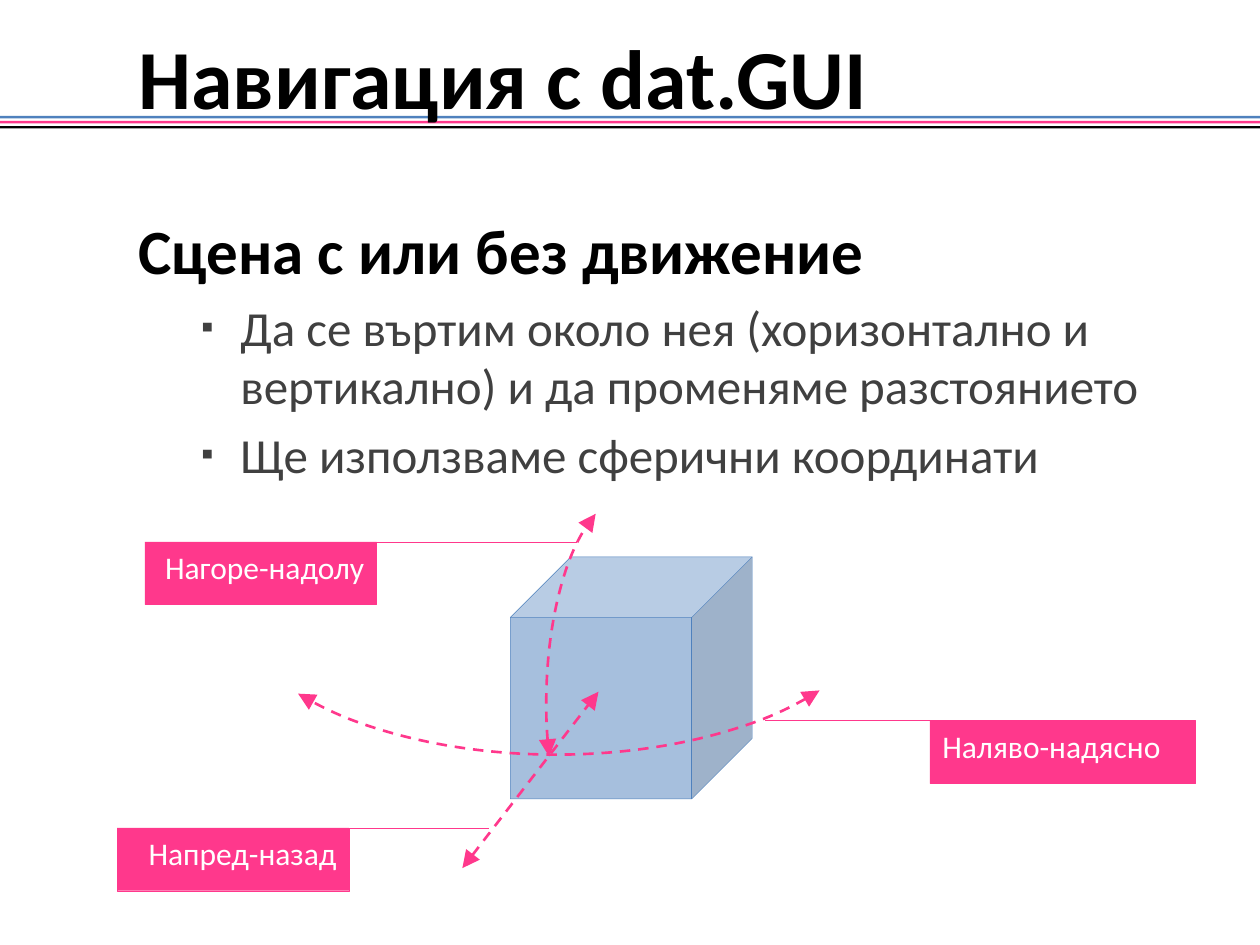
"""Build the slide on camera navigation around a scene with dat.GUI."""
import pptx
import pptx.dml.color
import pptx.enum.dml
import pptx.enum.shapes
import pptx.enum.text
import pptx.oxml.ns
import pptx.util

RGB = pptx.dml.color.RGBColor
BLUE = RGB(0x4F, 0x81, 0xBD)
PINK = RGB(0xFF, 0x38, 0x8C)
BLACK = RGB(0, 0, 0)
GREY = RGB(0x40, 0x40, 0x40)
WHITE = RGB(0xFF, 0xFF, 0xFF)
FORMS = pptx.enum.shapes.MSO_SHAPE
STRAIGHT = pptx.enum.shapes.MSO_CONNECTOR.STRAIGHT
ALIGN = pptx.enum.text.PP_ALIGN
ANCHOR = pptx.enum.text.MSO_ANCHOR
qn = pptx.oxml.ns.qn


def write(paragraph, text, size, color, bold=False, align=ALIGN.LEFT, before=0.2):
    paragraph.alignment = align
    paragraph.space_before = pptx.util.Pt(size * before)
    run = paragraph.add_run()
    run.text = text
    run.font.size = pptx.util.Pt(size)
    run.font.name = "Calibri"
    run.font.bold = bold
    run.font.color.rgb = color


def stroke(item, color, width=0.25, arrows=False):
    item.line.color.rgb = color
    item.line.width = pptx.util.Pt(width)
    properties = item.element.spPr
    if arrows:
        item.line.dash_style = pptx.enum.dml.MSO_LINE.DASH
        outline = properties.find(qn("a:ln"))
        for end in ("a:headEnd", "a:tailEnd"):
            outline.append(outline.makeelement(qn(end), {"type": "triangle", "w": "lg", "len": "lg"}))
    if properties.find(qn("a:effectLst")) is None:
        properties.append(properties.makeelement(qn("a:effectLst"), {}))


deck = pptx.Presentation()
deck.slide_width, deck.slide_height = pptx.util.Inches(10), pptx.util.Inches(7.5)
COL, ROW = deck.slide_width // 100, deck.slide_height // 75
GRID = (COL, ROW, COL, ROW)
slide = deck.slides.add_slide(deck.slide_layouts[5])
shapes = slide.shapes

for row, color in zip((9.2, 9.6, 10), (BLUE, PINK, BLACK)):
    stripe = shapes.add_shape(FORMS.RECTANGLE, 0, int(row * ROW), 100 * COL, int(0.2 * ROW))
    stripe.shadow.inherit = False
    stripe.fill.solid()
    stripe.fill.fore_color.rgb = color
    stripe.line.fill.background()

heading = shapes.title
heading.left, heading.top, heading.width, heading.height = 0, int(2.5 * ROW), 100 * COL, int(7.1 * ROW)
heading.text_frame.vertical_anchor = ANCHOR.MIDDLE
heading.text_frame.auto_size = pptx.enum.text.MSO_AUTO_SIZE.NONE
write(heading.text_frame.paragraphs[0], "Навигация с dat.GUI", 48, BLACK, bold=True, before=0)
heading.text_frame.paragraphs[0]._p.get_or_add_pPr().set("marL", str(10 * COL))
heading.element.getparent().append(heading.element)

body = shapes.add_textbox(10 * COL, int(13.3 * ROW), int(89.2 * COL), int(60.8 * ROW)).text_frame
body.word_wrap = True
write(body.paragraphs[0], "Сцена с или без движение", 36, BLACK, bold=True)
body.paragraphs[0].line_spacing = 1.5
for point in (
    "Да се въртим около нея (хоризонтално и вертикално) и да променяме разстоянието",
    "Ще използваме сферични координати",
):
    paragraph = body.add_paragraph()
    write(paragraph, point, 28, GREY)
    properties = paragraph._p.get_or_add_pPr()
    properties.set("marL", str(int(8.1 * COL)))
    properties.set("indent", str(int(-3.1 * COL)))
    for tag, value in (
        ("a:buSzPct", {"val": "70000"}),
        ("a:buFont", {"typeface": "Calibri"}),
        ("a:buChar", {"char": "▪"}),
    ):
        properties.append(properties.makeelement(qn(tag), value))

cube = shapes.add_shape(FORMS.CUBE, *[int(n * unit) for n, unit in zip((40.5, 44.2, 19.2, 19.2), GRID)])
cube.shadow.inherit = False
cube.fill.solid()
cube.fill.fore_color.rgb = BLUE
tint = cube.element.spPr.find(".//" + qn("a:srgbClr"))
tint.append(tint.makeelement(qn("a:alpha"), {"val": "50000"}))
stroke(cube, BLUE)

for place, turn, start, stop in (
    ((17.6, 33.3, 53.1, 26.6), 0, 12.86, 94.54),
    ((33.6, 48.9, 33.3, 13.8), 90, 34.5, 101.27),
):
    orbit = shapes.add_shape(FORMS.ARC, *[int(n * unit) for n, unit in zip(place, GRID)])
    orbit.rotation = turn
    orbit.adjustments[0], orbit.adjustments[1] = start, stop
    orbit.shadow.inherit = False
    orbit.fill.background()
    stroke(orbit, PINK, 1.5, arrows=True)

zoom = shapes.add_connector(STRAIGHT, *[int(n * unit) for n, unit in zip((36.7, 68.9, 47.5, 54.9), GRID)])
stroke(zoom, PINK, 1.5, arrows=True)

for text, left, top, width, align, line_start, line_end in (
    ("Наляво-надясно", 73.8, 57.2, 21.1, ALIGN.LEFT, 94.8, 60.7),
    ("Нагоре-надолу", 11.5, 43, 18.4, ALIGN.RIGHT, 11.5, 45.8),
    ("Напред-назад", 9.3, 65.7, 18.4, ALIGN.RIGHT, 9.3, 38.8),
):
    label = shapes.add_shape(FORMS.RECTANGLE, *[int(n * unit) for n, unit in zip((left, top, width, 5), GRID)])
    label.shadow.inherit = False
    label.fill.solid()
    label.fill.fore_color.rgb = PINK
    stroke(label, PINK)
    label.text_frame.vertical_anchor = ANCHOR.TOP
    write(label.text_frame.paragraphs[0], text, 18, WHITE, align=align)
    leader = shapes.add_connector(
        STRAIGHT, *[int(n * unit) for n, unit in zip((line_start, top, line_end, top), GRID)]
    )
    stroke(leader, PINK)

deck.save("out.pptx")
